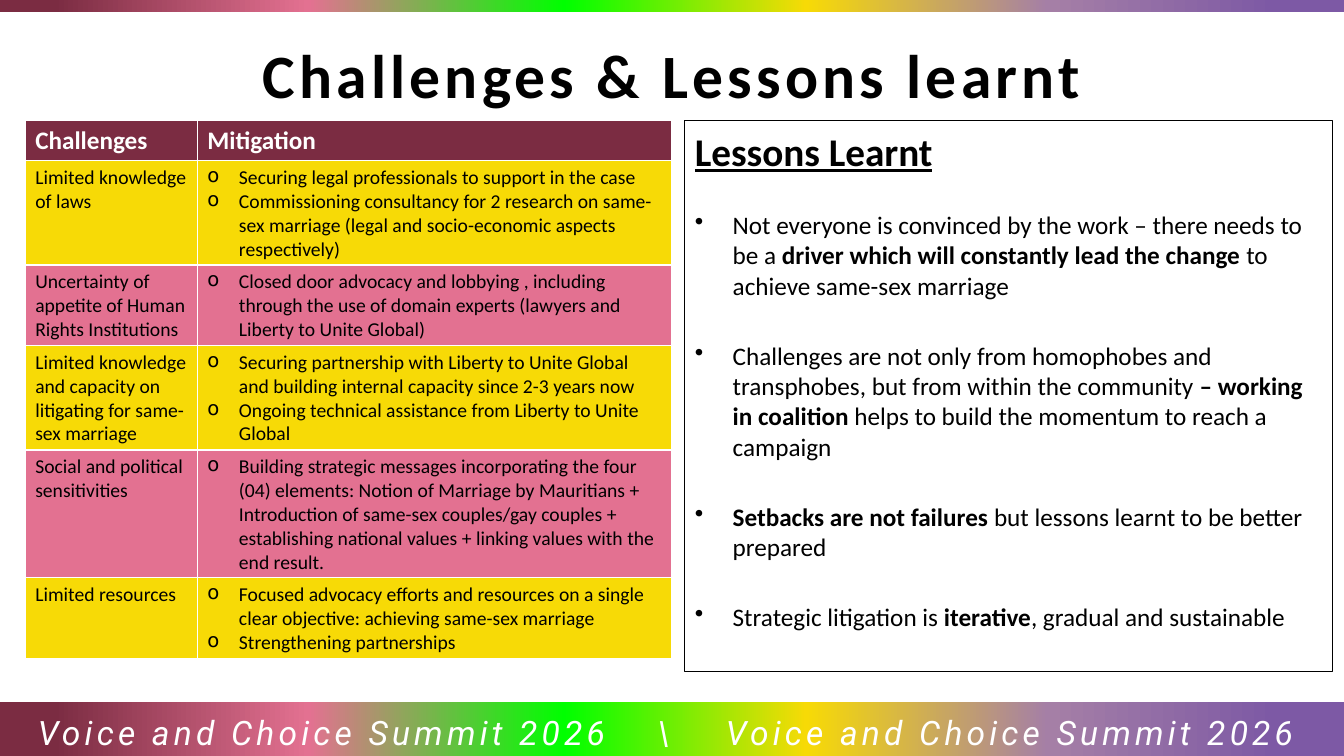
from lxml import etree
from pptx import Presentation
from pptx.dml.color import RGBColor
from pptx.enum.shapes import MSO_SHAPE
from pptx.enum.text import MSO_ANCHOR, PP_ALIGN
from pptx.oxml.ns import qn
from pptx.util import Pt

RECT = MSO_SHAPE.RECTANGLE
TOP, MIDDLE = MSO_ANCHOR.TOP, MSO_ANCHOR.MIDDLE
LEFT, CENTER = PP_ALIGN.LEFT, PP_ALIGN.CENTER

BLACK = RGBColor(0x00, 0x00, 0x00)
WHITE = RGBColor(0xFF, 0xFF, 0xFF)
WINE = RGBColor(0x7B, 0x2C, 0x42)
PINK = RGBColor(0xE3, 0x71, 0x91)
GREEN = RGBColor(0x00, 0xFF, 0x00)
YELLOW = RGBColor(0xF7, 0xDA, 0x06)
MAUVE = RGBColor(0xA5, 0x7F, 0xA6)
PURPLE = RGBColor(0x7D, 0x59, 0xA5)

STOPS = [(5, PURPLE), (22, MAUVE), (40, YELLOW), (58, GREEN), (77, PINK), (96, WINE)]
WIDTH = 960

# Challenge, mitigations, lines of text in the row
ROWS = [
    ("Limited knowledge of laws",
     ["Securing legal professionals to support in the case",
      "Commissioning consultancy for 2 research on same-sex marriage "
      "(legal and socio-economic aspects respectively)"], 4),
    ("Uncertainty of appetite of Human Rights Institutions",
     ["Closed door advocacy and lobbying , including through the use of "
      "domain experts (lawyers and Liberty to Unite Global)"], 3),
    ("Limited knowledge and capacity on litigating for same-sex marriage",
     ["Securing partnership with Liberty to Unite Global and building "
      "internal capacity since 2-3 years now",
      "Ongoing technical assistance from Liberty to Unite Global"], 4),
    ("Social and political sensitivities",
     ["Building strategic messages incorporating the four (04) elements: "
      "Notion of Marriage by Mauritians + Introduction of same-sex "
      "couples/gay couples + establishing national values + linking values "
      "with the end result."], 5),
    ("Limited resources",
     ["Focused advocacy efforts and resources on a single clear objective: "
      "achieving same-sex marriage",
      "Strengthening partnerships"], 3),
]

# Each lesson is a list of (text, bold)
LESSONS = [
    [("Not everyone is convinced by the work – there needs to be a ", False),
     ("driver which will constantly lead the change ", True),
     ("to achieve same-sex marriage", False)],
    [("Challenges are not only from homophobes and transphobes, but from "
      "within the community ", False),
     ("– working in coalition ", True),
     ("helps to build the momentum to reach a campaign", False)],
    [("Setbacks are not failures ", True),
     ("but lessons learnt to be better prepared", False)],
    [("Strategic litigation is ", False),
     ("iterative", True),
     (", gradual and sustainable", False)],
]


def style(para, size, color, bold=False, face="Calibri"):
    for run in para.runs:
        font = run.font
        font.name, font.size, font.bold = face, Pt(size), bold
        font.color.rgb = color


def bullet(para, char, indent):
    """Give the paragraph a bullet with a hanging indent in points."""
    props = para._p.get_or_add_pPr()
    props.set("marL", str(Pt(indent)))
    props.set("indent", str(-Pt(indent)))
    etree.SubElement(props, qn("a:buChar")).set("char", char)


deck = Presentation()
deck.slide_width, deck.slide_height = Pt(WIDTH), Pt(540)
slide = deck.slides.add_slide(deck.slide_layouts[5])
shapes = slide.shapes

# Gradient bands at the top and bottom
for top, height in [(0, 8.64), (501.12, 41.04)]:
    band = shapes.add_shape(RECT, 0, Pt(top), Pt(WIDTH), Pt(height))
    band.shadow.inherit = False
    band.line.fill.background()
    band.fill.gradient()
    band.fill.gradient_angle = 180
    stops = band._element.spPr.find(".//" + qn("a:gsLst"))
    for old in list(stops):
        stops.remove(old)
    for place, color in STOPS:
        stop = etree.SubElement(stops, qn("a:gs"), pos=str(place * 1000))
        etree.SubElement(stop, qn("a:srgbClr"), val=str(color))

# Title
title = shapes.title
title.left, title.top, title.width, title.height = 0, Pt(19.44), Pt(WIDTH), Pt(66.24)
frame = title.text_frame
frame.text = "Challenges & Lessons learnt"
frame.vertical_anchor = MIDDLE
para = frame.paragraphs[0]
para.alignment = CENTER
style(para, 44, BLACK, bold=True)
para.runs[0].font._element.set("spc", "300")

# Footer line
footer = shapes.add_textbox(0, Pt(503.28), Pt(WIDTH), Pt(35.28))
frame = footer.text_frame
frame.word_wrap = True
frame.margin_left, frame.margin_right = Pt(27), 0
frame.text = "Voice and Choice Summit 2026\t\\\tVoice and Choice Summit 2026"
para = frame.paragraphs[0]
para.line_spacing = 1.07
tabs = etree.SubElement(para._p.get_or_add_pPr(), qn("a:tabLst"))
for place, side in [(448.5, "ctr"), (491.5, "l")]:
    etree.SubElement(tabs, qn("a:tab"), pos=str(Pt(place)), algn=side)
style(para, 24, WHITE, face="Roboto")
for run in para.runs:
    run.font.italic = True
    run.font._element.set("spc", "300")

# Table of challenges
table = shapes.add_table(len(ROWS) + 1, 2, Pt(18), Pt(86), Pt(462), Pt(384)).table
table.columns[0].width, table.columns[1].width = Pt(123), Pt(339)
table.rows[0].height = Pt(28)
for col, head in enumerate(["Challenges", "Mitigation"]):
    cell = table.cell(0, col)
    cell.text = head
    cell.fill.solid()
    cell.fill.fore_color.rgb = WINE
    style(cell.text_frame.paragraphs[0], 18, WHITE, bold=True)

for row, (issue, steps, lines) in enumerate(ROWS, 1):
    table.rows[row].height = Pt(17 * lines + 6)
    for col, text in enumerate([issue, "\n".join(steps)]):
        cell = table.cell(row, col)
        cell.text = text
        cell.fill.solid()
        cell.fill.fore_color.rgb = YELLOW if row % 2 else PINK
        for para in cell.text_frame.paragraphs:
            if col:
                bullet(para, "o", 22.5)
            style(para, 14, BLACK)

# Lessons box
box = shapes.add_shape(RECT, Pt(489.3), Pt(86), Pt(462.5), Pt(393.8))
box.shadow.inherit = False
box.fill.background()
box.line.color.rgb = BLACK
box.line.width = Pt(0.75)
frame = box.text_frame
frame.word_wrap = True
frame.vertical_anchor = TOP
frame.margin_top = Pt(5)
frame.text = "Lessons Learnt"
para = frame.paragraphs[0]
para.alignment = LEFT
style(para, 28, BLACK, bold=True)
para.runs[0].font.underline = True

for num, parts in enumerate(LESSONS):
    para = frame.add_paragraph()
    para.alignment = LEFT
    para.space_before = Pt(28.6 if num else 25)
    bullet(para, "•", 27)
    for text, bold in parts:
        para.add_run().text = text
    style(para, 18, BLACK)
    for run, (text, bold) in zip(para.runs, parts):
        run.font.bold = bold

deck.save("out.pptx")
